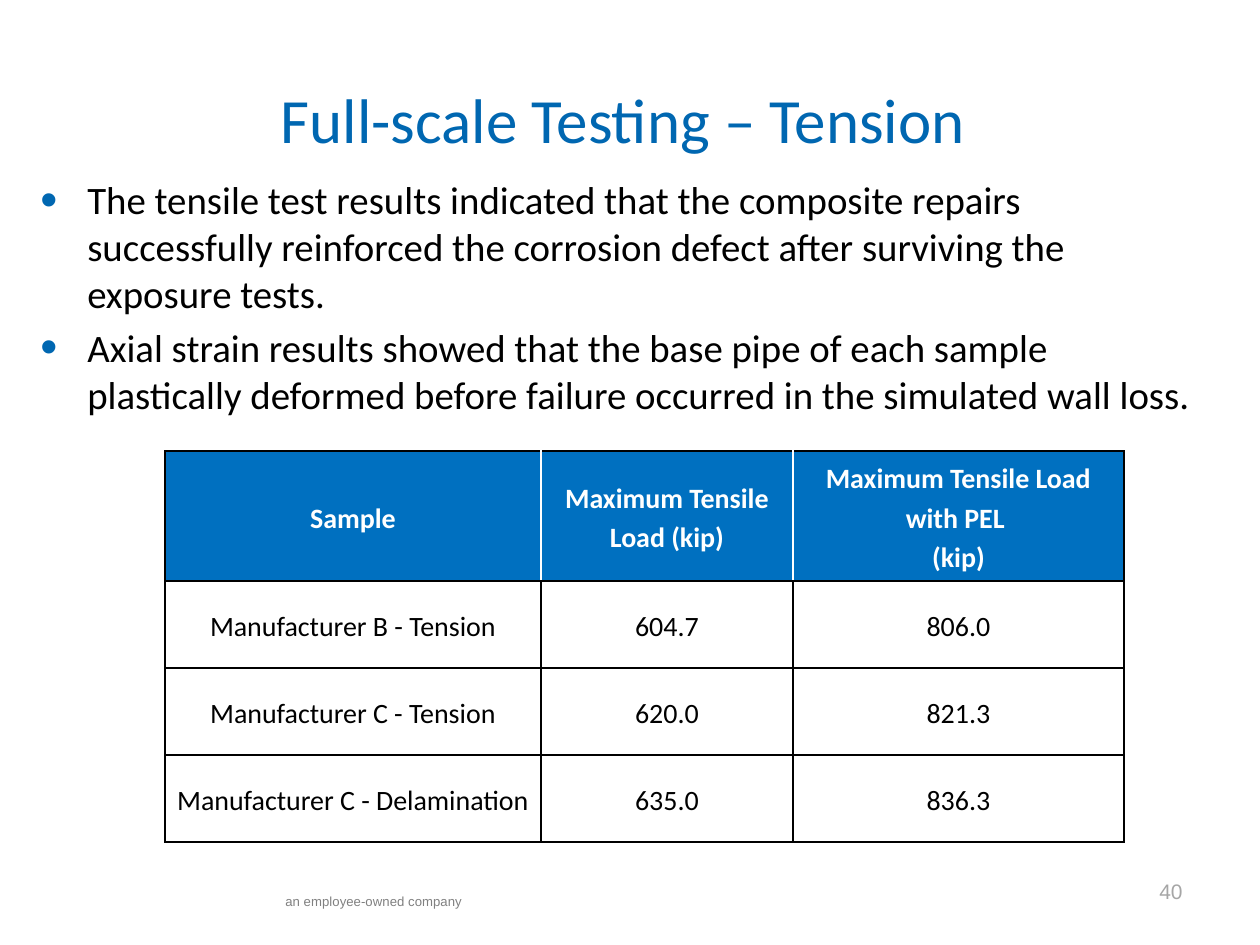
from lxml import etree
from pptx import Presentation
from pptx.dml.color import RGBColor
from pptx.enum.text import MSO_ANCHOR, PP_ALIGN
from pptx.oxml.ns import qn
from pptx.util import Emu, Pt

PX_PER_INCH = 126
LEFT, CENTER = PP_ALIGN.LEFT, PP_ALIGN.CENTER
TOP, MIDDLE = MSO_ANCHOR.TOP, MSO_ANCHOR.MIDDLE

BLACK = RGBColor(0x00, 0x00, 0x00)
WHITE = RGBColor(0xFF, 0xFF, 0xFF)
TITLE_BLUE = RGBColor(0x00, 0x67, 0xB1)
HEADER_BLUE = RGBColor(0x00, 0x70, 0xC0)
FOOTER_GRAY = RGBColor(0x80, 0x80, 0x80)
NUMBER_GRAY = RGBColor(0xA6, 0xA6, 0xA6)


def px(length):
    return Emu(round(length * 914400 / PX_PER_INCH))


class SlideBuilder:
    heading_font = "Calibri"
    footer_font = "Arial"

    def __init__(self, slide):
        self.slide = slide

    def style(self, paragraph, size, color, font, align=LEFT, bold=False):
        paragraph.alignment = align
        paragraph.font.size = Pt(size)
        paragraph.font.name = font
        paragraph.font.bold = bold
        paragraph.font.color.rgb = color

    def frame(self, left, top, width, height, anchor=TOP):
        box = self.slide.shapes.add_textbox(px(left), px(top), px(width), px(height))
        box.text_frame.word_wrap = True
        box.text_frame.vertical_anchor = anchor
        return box.text_frame

    def text(self, area, text, size, color, font, align=LEFT, anchor=TOP):
        paragraph = self.frame(*area, anchor).paragraphs[0]
        paragraph.text = text
        self.style(paragraph, size, color, font, align)

    def bullets(self, area, items, size, indent, gap):
        frame = self.frame(*area)
        for index, item in enumerate(items):
            paragraph = frame.add_paragraph() if index else frame.paragraphs[0]
            paragraph.text = item
            if index:
                paragraph.space_before = Pt(gap)
            properties = paragraph._p.get_or_add_pPr()
            properties.set("marL", str(px(indent)))
            properties.set("indent", str(-px(indent)))
            bullet_color = etree.SubElement(properties, qn("a:buClr"))
            etree.SubElement(bullet_color, qn("a:srgbClr"), val=str(TITLE_BLUE))
            etree.SubElement(properties, qn("a:buSzPct"), val="125000")
            etree.SubElement(properties, qn("a:buFont"), typeface="Arial")
            etree.SubElement(properties, qn("a:buChar"), char="•")
            self.style(paragraph, size, BLACK, self.heading_font)

    def borders(self, cell, colors):
        properties = cell._tc.get_or_add_tcPr()
        for side, color in colors.items():
            line = etree.SubElement(properties, qn(f"a:ln{side}"), w=str(Pt(1)))
            fill = etree.SubElement(line, qn("a:solidFill"))
            etree.SubElement(fill, qn("a:srgbClr"), val=str(color))

    def table(self, left, top, widths, heights, rows, size):
        table = self.slide.shapes.add_table(
            len(rows), len(widths), px(left), px(top), px(sum(widths)), px(sum(heights))
        ).table
        table.first_row = table.horz_banding = False
        for column, width in zip(table.columns, widths):
            column.width = px(width)
        for row, height in zip(table.rows, heights):
            row.height = px(height)
        last = len(widths) - 1
        for row_index, row in enumerate(rows):
            header = row_index == 0
            inner = WHITE if header else BLACK
            for column_index, text in enumerate(row):
                cell = table.cell(row_index, column_index)
                cell.text = text
                cell.vertical_anchor = MIDDLE
                cell.margin_left = cell.margin_right = px(9)
                cell.margin_top = cell.margin_bottom = 0
                self.borders(cell, {
                    "L": inner if column_index > 0 else BLACK,
                    "R": inner if column_index < last else BLACK,
                    "T": BLACK,
                    "B": BLACK,
                })
                if header:
                    cell.fill.solid()
                    cell.fill.fore_color.rgb = HEADER_BLUE
                else:
                    cell.fill.background()
                for paragraph in cell.text_frame.paragraphs:
                    paragraph.line_spacing = 1.15
                    self.style(paragraph, size, inner, self.heading_font, CENTER, header)


def main():
    presentation = Presentation()
    presentation.slide_width, presentation.slide_height = px(1260), px(945)
    builder = SlideBuilder(presentation.slides.add_slide(presentation.slide_layouts[6]))

    # Footer
    builder.text((1113, 872, 116, 38), "40", 12, NUMBER_GRAY, builder.footer_font, CENTER)
    builder.text((273, 887, 221, 29), "an employee-owned company", 7.5, FOOTER_GRAY,
                 builder.footer_font)

    # Title
    builder.text((63, 63, 1134, 110), "Full-scale Testing – Tension ", 36, TITLE_BLUE,
                 builder.heading_font, CENTER, MIDDLE)

    # Load results
    builder.table(165, 451, (376, 252, 331), (130, 87, 87, 87), (
        ("Sample", "Maximum Tensile Load (kip)", "Maximum Tensile Load with PEL \n(kip)"),
        ("Manufacturer B - Tension", "604.7", "806.0"),
        ("Manufacturer C - Tension", "620.0", "821.3"),
        ("Manufacturer C - Delamination", "635.0", "836.3"),
    ), 16)

    # Findings
    builder.bullets((28, 170, 1187, 255), (
        "The tensile test results indicated that the composite repairs successfully "
        "reinforced the corrosion defect after surviving the exposure tests.",
        "Axial strain results showed that the base pipe of each sample plastically "
        "deformed before failure occurred in the simulated wall loss.",
    ), 22.2, 47, 4.4)

    presentation.save("out.pptx")


if __name__ == "__main__":
    main()
